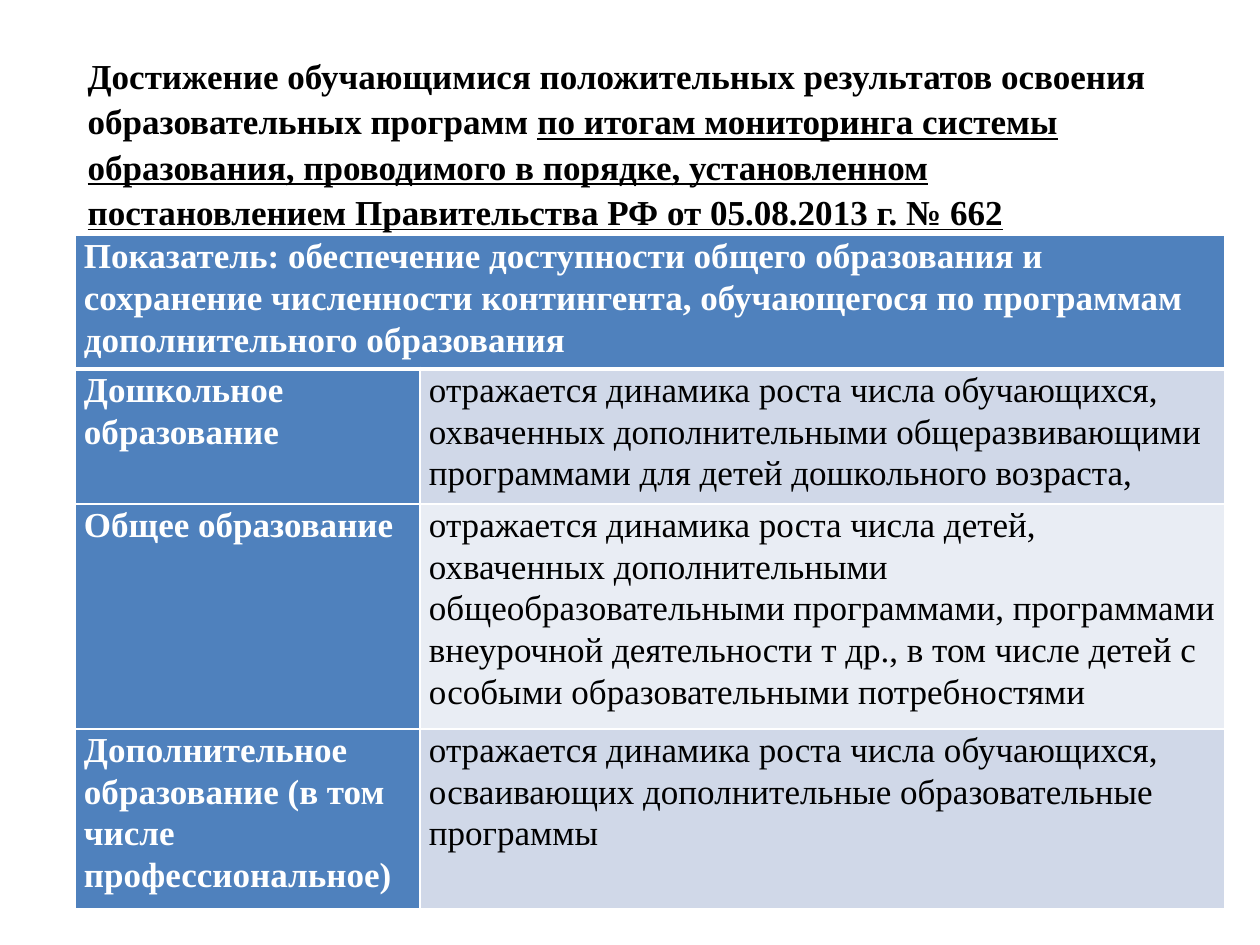
from lxml.etree import SubElement
from pptx import Presentation
from pptx.dml.color import RGBColor
from pptx.enum.text import MSO_ANCHOR, MSO_AUTO_SIZE, PP_ALIGN
from pptx.oxml.ns import qn
from pptx.util import Emu, Pt

PX_PER_INCH = 126
FONT = "Times New Roman"
BLUE, WHITE, BLACK = "4F81BD", "FFFFFF", "000000"
BANDS = ["D0D8E8", "E9EDF4"]
COLUMN_WIDTHS = [345, 805]
ROW_HEIGHTS = [134, 135, 225, 180]

HEADING = [
    ("Достижение обучающимися положительных результатов освоения "
     "образовательных программ ", False),
    ("по итогам мониторинга системы образования, проводимого в порядке, "
     "установленном постановлением Правительства РФ от 05.08.2013 г. № 662", True),
]
INDICATOR = ("Показатель: обеспечение доступности общего образования и сохранение "
             "численности контингента, обучающегося по программам "
             "дополнительного образования")
LEVELS = [
    ("Дошкольное образование",
     "отражается динамика роста числа обучающихся, охваченных дополнительными "
     "общеразвивающими программами для детей дошкольного возраста,"),
    ("Общее образование",
     "отражается динамика роста числа детей, охваченных дополнительными "
     "общеобразовательными программами, программами внеурочной деятельности т др., "
     "в том числе детей с особыми образовательными потребностями"),
    ("Дополнительное образование (в том числе профессиональное)",
     "отражается динамика роста числа обучающихся, осваивающих дополнительные "
     "образовательные программы"),
]


def px(length):
    return Emu(round(length * 914400 / PX_PER_INCH))


def color(value):
    return RGBColor.from_string(value)


def add_run(paragraph, text, ink, bold, underline=False):
    run = paragraph.add_run()
    run.text = text
    font = run.font
    font.name, font.size, font.bold = FONT, Pt(20), bold
    font.color.rgb = color(ink)
    if underline:
        font.underline = True


def add_heading(slide):
    heading = slide.shapes.title
    heading.left, heading.top = px(75), px(45)
    heading.width, heading.height = px(1121), px(220)
    frame = heading.text_frame
    frame.word_wrap = True
    frame.auto_size = MSO_AUTO_SIZE.NONE
    frame.vertical_anchor = MSO_ANCHOR.TOP
    paragraph = frame.paragraphs[0]
    paragraph.alignment = PP_ALIGN.LEFT
    paragraph.line_spacing = 1.08
    for text, underline in HEADING:
        add_run(paragraph, text, BLACK, True, underline)


def set_borders(cell, top, bottom):
    properties = cell._tc.get_or_add_tcPr()
    for side, width in (("L", 1), ("R", 1), ("T", top), ("B", bottom)):
        line = SubElement(properties, qn(f"a:ln{side}"), w=str(Pt(width)))
        fill = SubElement(line, qn("a:solidFill"))
        SubElement(fill, qn("a:srgbClr"), val=WHITE)


def fill_cell(cell, text, background, ink, bold):
    cell.fill.solid()
    cell.fill.fore_color.rgb = color(background)
    cell.margin_left = cell.margin_right = px(9)
    cell.margin_top = cell.margin_bottom = 0
    cell.vertical_anchor = MSO_ANCHOR.TOP
    paragraph = cell.text_frame.paragraphs[0]
    paragraph.line_spacing = 1.07
    add_run(paragraph, text, ink, bold)


def add_indicator_table(slide):
    table = slide.shapes.add_table(
        len(ROW_HEIGHTS), len(COLUMN_WIDTHS), px(75), px(235),
        px(sum(COLUMN_WIDTHS)), px(sum(ROW_HEIGHTS))).table
    for column, width in zip(table.columns, COLUMN_WIDTHS):
        column.width = px(width)
    for index, height in enumerate(ROW_HEIGHTS):
        table.rows[index].height = px(height)
        for cell in table.rows[index].cells:
            set_borders(cell, 3 if index == 1 else 1, 3 if index == 0 else 1)
    table.cell(0, 0).merge(table.cell(0, 1))
    fill_cell(table.cell(0, 0), INDICATOR, BLUE, WHITE, True)
    for index, (level, measure) in enumerate(LEVELS):
        fill_cell(table.cell(index + 1, 0), level, BLUE, WHITE, True)
        fill_cell(table.cell(index + 1, 1), measure, BANDS[index % 2], BLACK, False)


def main():
    presentation = Presentation()
    presentation.slide_width, presentation.slide_height = px(1260), px(945)
    slide = presentation.slides.add_slide(presentation.slide_layouts[5])
    add_heading(slide)
    add_indicator_table(slide)
    presentation.save("out.pptx")


if __name__ == "__main__":
    main()
